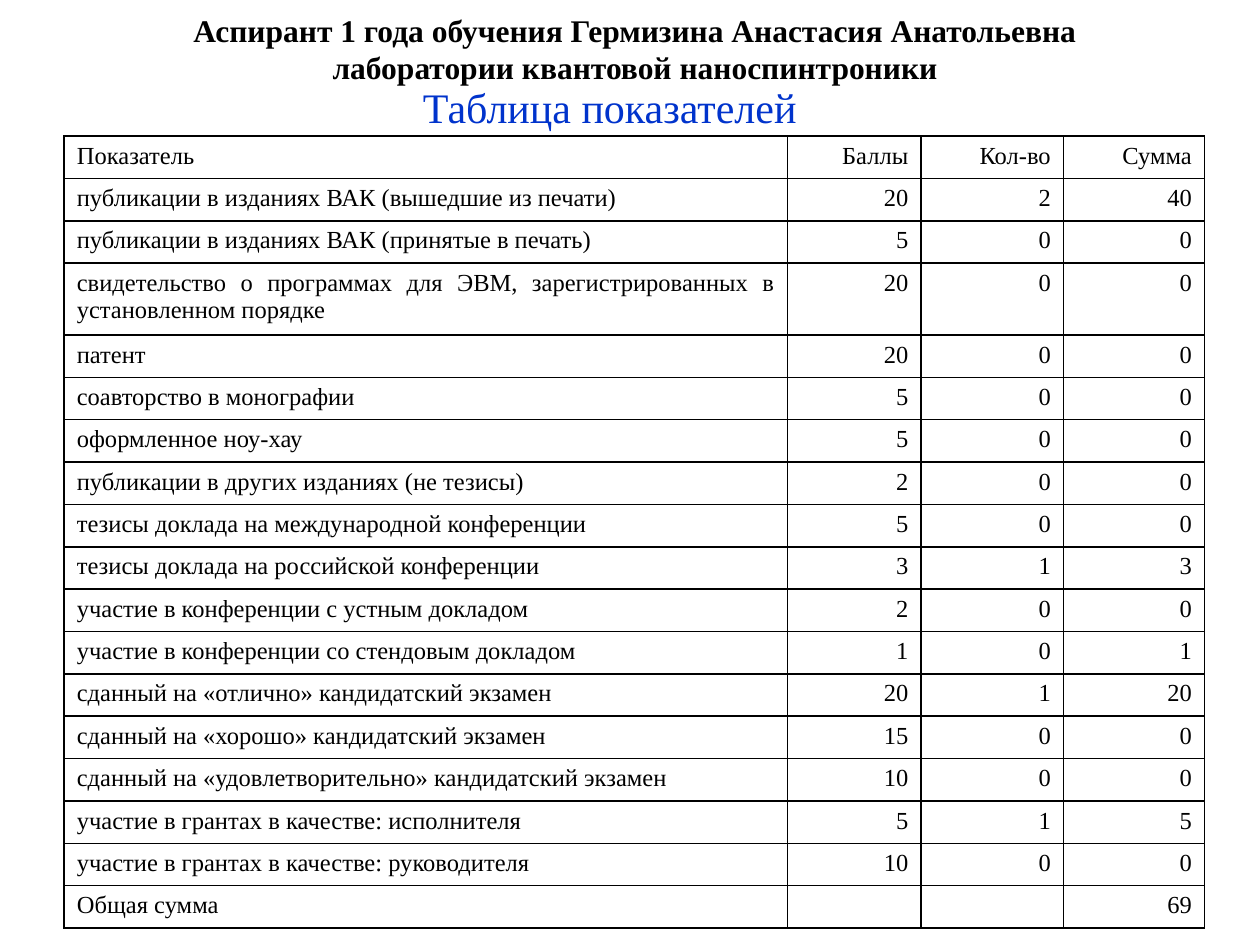
import pptx
import pptx.util
import pptx.dml.color
import pptx.enum.text
from lxml import etree
from pptx.oxml.ns import qn
from pptx.util import Inches

COLORS = {"text": "000000", "heading": "0033CC", "border": "000000"}
FONT = "Times New Roman"
ALIGN = pptx.enum.text.PP_ALIGN
ANCHOR = pptx.enum.text.MSO_ANCHOR

COLUMN_WIDTHS = [5.74, 1.06, 1.13, 1.12]
TABLE_HEIGHT = 6.29
TALL_ROW = 3
TALL_ROW_HEIGHT = 0.57
INDICATORS = [
    ("Показатель", "Баллы", "Кол-во", "Сумма"),
    ("публикации в изданиях ВАК (вышедшие из печати)", 20, 2, 40),
    ("публикации в изданиях ВАК (принятые в печать)", 5, 0, 0),
    ("свидетельство о программах для ЭВМ, зарегистрированных в установленном порядке", 20, 0, 0),
    ("патент", 20, 0, 0),
    ("соавторство в монографии", 5, 0, 0),
    ("оформленное ноу-хау", 5, 0, 0),
    ("публикации в других изданиях (не тезисы)", 2, 0, 0),
    ("тезисы доклада на международной конференции", 5, 0, 0),
    ("тезисы доклада на российской конференции", 3, 1, 3),
    ("участие в конференции с устным докладом", 2, 0, 0),
    ("участие в конференции со стендовым докладом", 1, 0, 1),
    ("сданный на «отлично» кандидатский экзамен", 20, 1, 20),
    ("сданный на «хорошо» кандидатский экзамен", 15, 0, 0),
    ("сданный на «удовлетворительно» кандидатский экзамен", 10, 0, 0),
    ("участие в грантах в качестве: исполнителя", 5, 1, 5),
    ("участие в грантах в качестве: руководителя", 10, 0, 0),
    ("Общая сумма", "", "", 69),
]


def add_run(paragraph, text, size, color, bold=False):
    run = paragraph.add_run()
    run.text = text
    run.font.name = FONT
    run.font.size = pptx.util.Pt(size)
    run.font.bold = bold
    run.font.color.rgb = pptx.dml.color.RGBColor.from_string(COLORS[color])


def add_title(slide):
    title = slide.shapes.title
    title.left, title.top = Inches(0.79), Inches(0.03)
    title.width, title.height = Inches(8.5), Inches(0.71)
    frame = title.text_frame
    frame.word_wrap = True
    frame.auto_size = pptx.enum.text.MSO_AUTO_SIZE.NONE
    frame.vertical_anchor = ANCHOR.MIDDLE
    paragraph = frame.paragraphs[0]
    paragraph.alignment = ALIGN.CENTER
    add_run(paragraph, "Аспирант 1 года обучения Гермизина Анастасия Анатольевна", 18, "text", True)
    paragraph.add_line_break()
    etree.SubElement(paragraph._p[-1], qn("a:rPr"), sz="1800")
    add_run(paragraph, "лаборатории квантовой наноспинтроники", 18, "text", True)


def add_heading(slide):
    heading = slide.shapes.add_textbox(Inches(1.34), Inches(0.6), Inches(7), Inches(0.47))
    heading.text_frame.word_wrap = True
    paragraph = heading.text_frame.paragraphs[0]
    paragraph.alignment = ALIGN.CENTER
    paragraph.space_before = pptx.util.Pt(4.8)
    add_run(paragraph, "Таблица показателей", 24, "heading")


def add_borders(cell):
    properties = cell._tc.get_or_add_tcPr()
    for side in ("a:lnL", "a:lnR", "a:lnT", "a:lnB"):
        line = etree.SubElement(properties, qn(side), w=str(pptx.util.Pt(1)))
        fill = etree.SubElement(line, qn("a:solidFill"))
        etree.SubElement(fill, qn("a:srgbClr"), val=COLORS["border"])


def fill_cell(cell, value, alignment):
    add_borders(cell)
    cell.fill.background()
    cell.margin_left = cell.margin_right = Inches(0.1)
    cell.margin_top = cell.margin_bottom = Inches(0.05)
    paragraph = cell.text_frame.paragraphs[0]
    paragraph.alignment = alignment
    if value == "":
        etree.SubElement(paragraph._p, qn("a:endParaRPr"), sz="1400")
    else:
        add_run(paragraph, str(value), 14, "text")


def add_indicator_table(slide):
    table = slide.shapes.add_table(
        len(INDICATORS), len(COLUMN_WIDTHS), Inches(0.51), Inches(1.08),
        Inches(sum(COLUMN_WIDTHS)), Inches(TABLE_HEIGHT)).table
    table.first_row = False
    table.horz_banding = False
    for column, width in zip(table.columns, COLUMN_WIDTHS):
        column.width = Inches(width)
    row_height = (TABLE_HEIGHT - TALL_ROW_HEIGHT) / (len(INDICATORS) - 1)
    for row_index, indicator in enumerate(INDICATORS):
        height = TALL_ROW_HEIGHT if row_index == TALL_ROW else row_height
        table.rows[row_index].height = Inches(height)
        for column_index, value in enumerate(indicator):
            alignment = ALIGN.RIGHT if column_index else ALIGN.JUSTIFY
            fill_cell(table.cell(row_index, column_index), value, alignment)


def main():
    presentation = pptx.Presentation()
    presentation.slide_width = Inches(10)
    presentation.slide_height = Inches(7.5)
    slide = presentation.slides.add_slide(presentation.slide_layouts[5])
    add_title(slide)
    add_heading(slide)
    add_indicator_table(slide)
    presentation.save("out.pptx")


if __name__ == "__main__":
    main()
